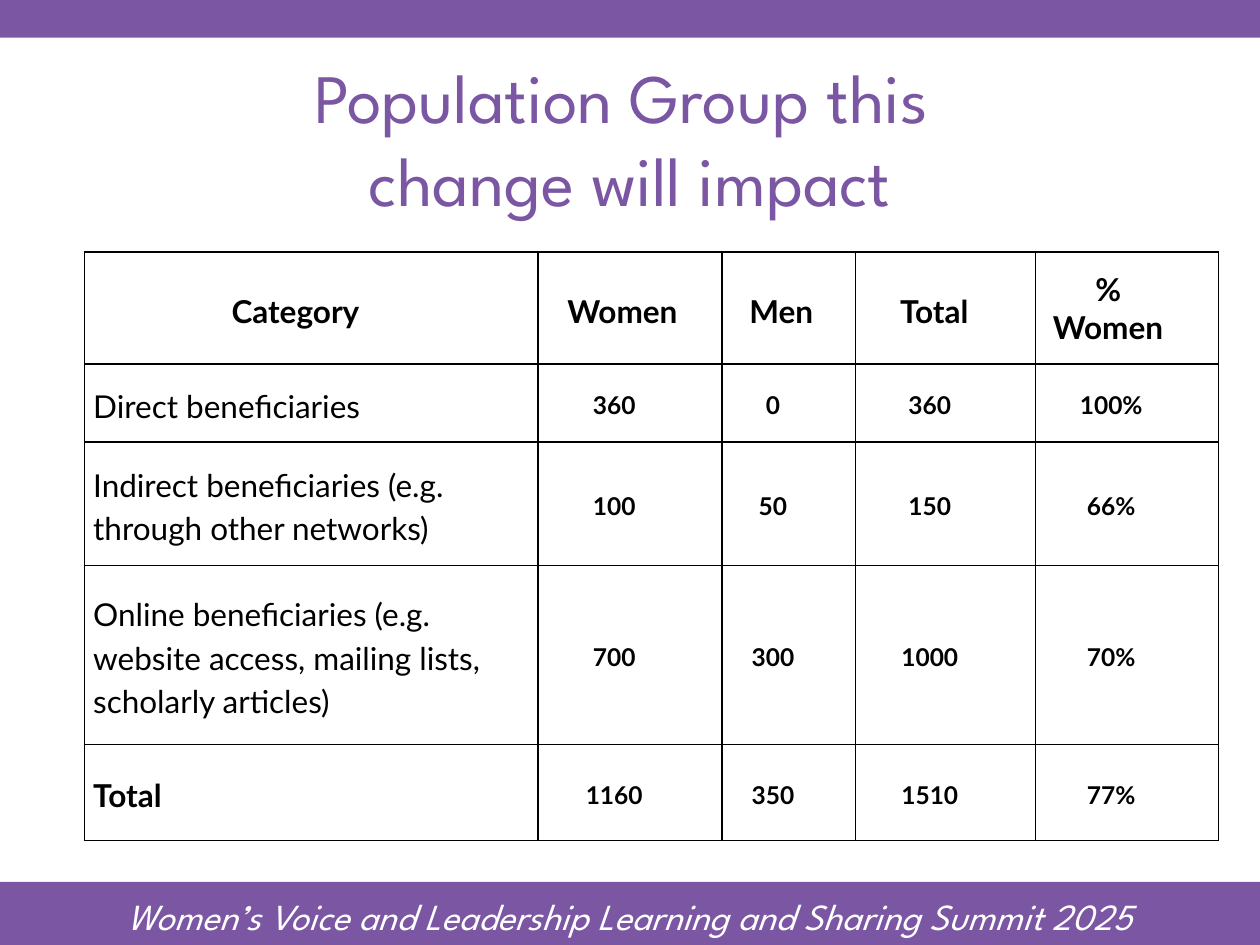
from lxml import etree
from pptx import Presentation
from pptx.dml.color import RGBColor
from pptx.enum.shapes import MSO_SHAPE
from pptx.enum.text import MSO_ANCHOR, PP_ALIGN
from pptx.oxml.ns import qn
from pptx.util import Inches, Pt

RECTANGLE = MSO_SHAPE.RECTANGLE
MIDDLE = MSO_ANCHOR.MIDDLE
CENTER, LEFT = PP_ALIGN.CENTER, PP_ALIGN.LEFT

COLORS = {"purple": "7B56A3", "white": "FFFFFF", "black": "000000"}
COLUMNS = [3.6, 1.46, 1.06, 1.43, 1.45]
ROWS = [0.89, 0.62, 0.98, 1.42, 0.76]
HEADER_INDENTS = [0.25, 0.12, 0.12, 0.18, 0.3]
BODY_INDENT = 0.25
CONTENT = [
    ["Category", "Women", "Men", "Total", "%\nWomen"],
    ["Direct beneficiaries", "360", "0", "360", "100%"],
    ["Indirect beneficiaries (e.g. through other networks)", "100", "50", "150", "66%"],
    ["Online beneficiaries (e.g. website access, mailing lists, scholarly articles)",
     "700", "300", "1000", "70%"],
    ["Total", "1160", "350", "1510", "77%"],
]


class SlideBuilder:
    """Holds the deck's style and the current slide; lengths are shares of the slide."""

    def __init__(self, deck):
        self.deck = deck
        self.slide = deck.slides.add_slide(deck.slide_layouts[5])

    def place(self, left, top, width, height):
        wide, high = self.deck.slide_width, self.deck.slide_height
        return int(left * wide), int(top * high), int(width * wide), int(height * high)

    def style(self, para, size, face, color, align, bold=False, italic=False):
        para.alignment = align
        font = para.font
        font.size, font.name, font.bold, font.italic = Pt(size), face, bold, italic
        font.color.rgb = RGBColor.from_string(COLORS[color])

    def title(self, text, place):
        box = self.slide.shapes.title
        box.left, box.top, box.width, box.height = self.place(*place)
        box.text_frame.vertical_anchor = MIDDLE
        para = box.text_frame.paragraphs[0]
        para.text = text
        self.style(para, 39.6, "League Spartan", "purple", CENTER)

    def bar(self, top, height):
        bar = self.slide.shapes.add_shape(RECTANGLE, *self.place(0, top, 1, height))
        bar.shadow.inherit = False
        bar.fill.solid()
        bar.fill.fore_color.rgb = RGBColor.from_string(COLORS["purple"])
        bar.line.fill.background()

    def footer(self, text, place):
        frame = self.slide.shapes.add_textbox(*self.place(*place)).text_frame
        frame.word_wrap = True
        para = frame.paragraphs[0]
        para.text = text
        para.line_spacing = 1.07
        self.style(para, 21, "League Spartan", "white", CENTER, italic=True)

    def border(self, cell):
        properties = cell._tc.get_or_add_tcPr()
        for index, side in enumerate(("lnL", "lnR", "lnT", "lnB")):
            line = etree.Element(qn(f"a:{side}"), w=str(Pt(1)))
            fill = etree.SubElement(line, qn("a:solidFill"))
            etree.SubElement(fill, qn("a:srgbClr"), val=COLORS["black"])
            properties.insert(index, line)

    def cell(self, cell, text, size, align, bold, indent):
        cell.fill.background()
        self.border(cell)
        cell.vertical_anchor = MIDDLE
        cell.margin_left = cell.margin_right = Inches(0.07)
        cell.margin_top = cell.margin_bottom = 0
        cell.text = text
        paras = cell.text_frame.paragraphs
        for para in paras:
            para.line_spacing = 1.15 if len(paras) == 1 else 1.0
            self.style(para, size, "Lato", "black", align, bold)
            para._p.get_or_add_pPr().set("marR", str(Inches(indent)))

    def table(self, content, left, top):
        frame = self.slide.shapes.add_table(
            len(ROWS), len(COLUMNS), *self.place(left, top, 0.9, 0.62))
        table = frame.table
        table.first_row = table.horz_banding = False
        for column, width in zip(table.columns, COLUMNS):
            column.width = Inches(width)
        for row, height in zip(table.rows, ROWS):
            row.height = Inches(height)
        last = len(content) - 1
        for r, texts in enumerate(content):
            for c, text in enumerate(texts):
                self.cell(
                    table.cell(r, c), text,
                    size=18 if r == 0 or c == 0 else 14,
                    align=LEFT if c == 0 and r > 0 else CENTER,
                    bold=c > 0 or r in (0, last),
                    indent=HEADER_INDENTS[c] if r == 0 else BODY_INDENT)


def main():
    deck = Presentation()
    deck.slide_width, deck.slide_height = Inches(10), Inches(7.5)
    page = SlideBuilder(deck)
    page.bar(0, 0.04)
    page.bar(14 / 15, 1 / 15)
    page.footer("Women’s Voice and Leadership Learning and Sharing Summit 2025",
                (0.017, 0.936, 0.966, 0.064))
    page.title("Population Group this \vchange will impact", (0, 0.084, 1, 0.123))
    page.table(CONTENT, 0.067, 4 / 15)
    deck.save("out.pptx")


if __name__ == "__main__":
    main()
